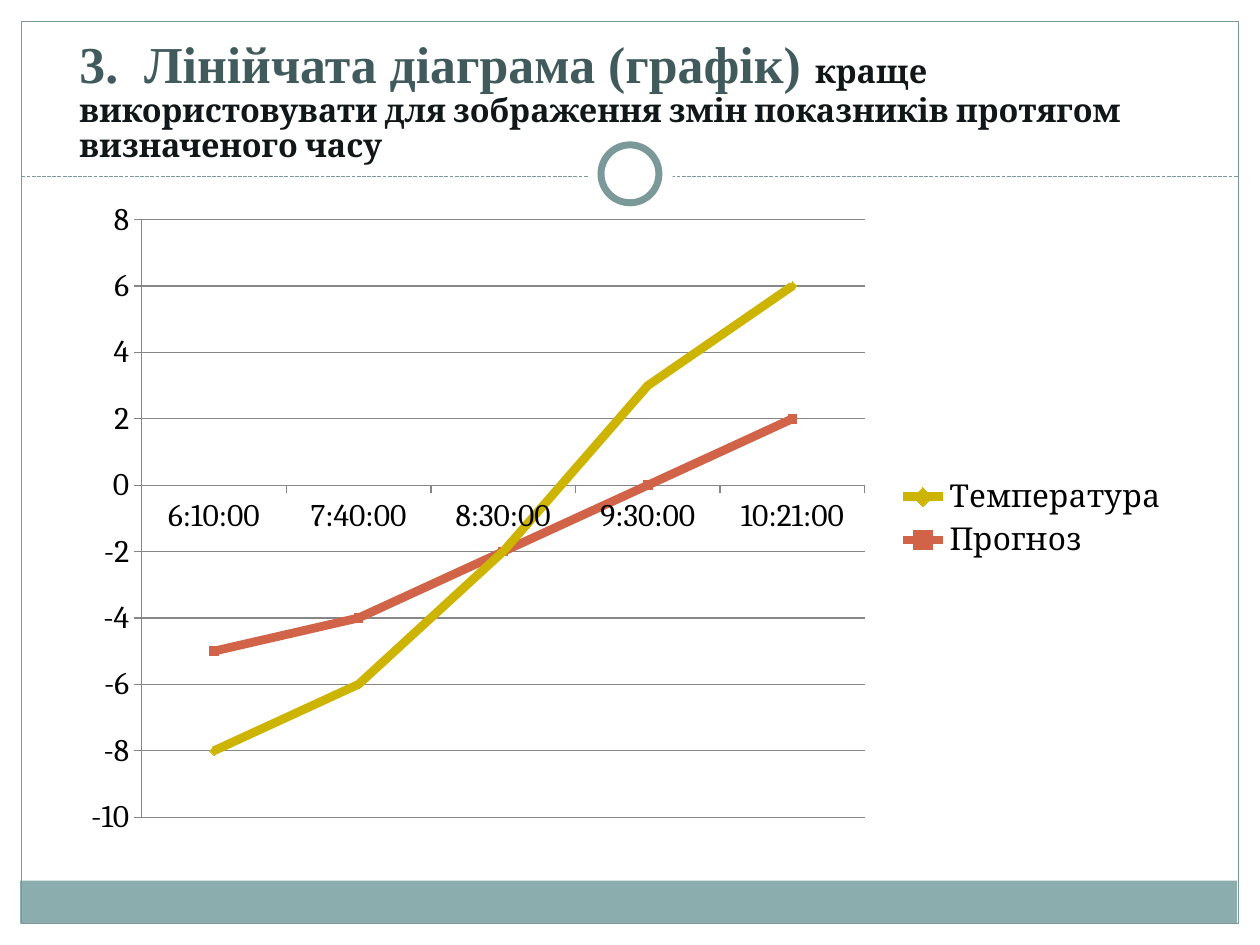
"""Build a slide showing when a line chart is the right choice."""
import pptx
import pptx.chart.data
import pptx.dml.color
import pptx.enum.chart
import pptx.enum.dml
import pptx.enum.shapes
import pptx.enum.text
import pptx.oxml
import pptx.oxml.ns
import pptx.util
from pptx.dml.color import RGBColor
from pptx.util import Inches, Pt

WHITE = RGBColor(0xFF, 0xFF, 0xFF)
BLACK = RGBColor(0, 0, 0)
TEAL = RGBColor(0x7C, 0x99, 0x9A)
BAND = RGBColor(0x8C, 0xAD, 0xAE)
HEADING = RGBColor(0x41, 0x5B, 0x5C)
INK = RGBColor(0x11, 0x16, 0x18)
GRID = RGBColor(0x86, 0x86, 0x86)
RED = RGBColor(0xD1, 0x63, 0x49)
GOLD = RGBColor(0xCC, 0xB4, 0x00)

MARKER = pptx.enum.chart.XL_MARKER_STYLE
SHAPE = pptx.enum.shapes.MSO_SHAPE

TITLE_RUNS = [
    ("3.  Лінійчата діаграма (графік) ", "Times New Roman", 29.6, HEADING),
    ("краще використовувати для зображення змін показників протягом визначеного часу",
     "Cambria", 18.5, INK),
]
TIMES = ["6:10:00", "7:40:00", "8:30:00", "9:30:00", "10:21:00"]
SERIES = [
    ("Прогноз", [-5, -4, -2, 0, 2], RED, MARKER.SQUARE),
    ("Температура", [-3, -2, 0, 3, 4], GOLD, MARKER.DIAMOND),
]
PLOT_AREA = {"x": 0.065, "y": 0.05, "w": 0.65, "h": 0.9}

FRAME_SHAPES = [
    (SHAPE.RECTANGLE, (0, 0, 10, 1.52), WHITE, None),
    (SHAPE.RECTANGLE, (0, 0, 0.17, 7.5), WHITE, None),
    (SHAPE.RECTANGLE, (9.83, 0, 0.17, 7.5), WHITE, None),
    (SHAPE.RECTANGLE, (0.16, 6.99, 9.66, 0.34), BAND, None),
    (SHAPE.RECTANGLE, (0.17, 0.17, 9.66, 7.16), None, 0.75),
]
RING_SHAPES = [
    (SHAPE.OVAL, (4.67, 1.05, 0.67, 0.67), WHITE, None),
    (SHAPE.OVAL, (4.77, 1.15, 0.46, 0.46), WHITE, 4),
]


def add_shapes(slide, items):
    for kind, box, fill, line_width in items:
        shape = slide.shapes.add_shape(kind, *map(Inches, box))
        shape.shadow.inherit = False
        if fill is None:
            shape.fill.background()
        else:
            shape.fill.solid()
            shape.fill.fore_color.rgb = fill
        if line_width is None:
            shape.line.fill.background()
        else:
            shape.line.color.rgb = TEAL
            shape.line.width = Pt(line_width)


def add_divider(slide):
    divider = slide.shapes.add_connector(
        pptx.enum.shapes.MSO_CONNECTOR.STRAIGHT,
        Inches(0.17), Inches(1.4), Inches(9.83), Inches(1.4))
    divider.line.color.rgb = TEAL
    divider.line.width = Pt(0.75)
    divider.line.dash_style = pptx.enum.dml.MSO_LINE.SQUARE_DOT
    properties = divider._element.spPr
    properties.append(pptx.oxml.parse_xml(
        f"<a:effectLst {pptx.oxml.ns.nsdecls('a')}/>"))


def fill_title(slide):
    title = slide.shapes.title
    title.left, title.top, title.width, title.height = map(
        Inches, (0.23, 0.16, 9.45, 1.17))
    frame = title.text_frame
    frame.word_wrap = True
    frame.auto_size = pptx.enum.text.MSO_AUTO_SIZE.NONE
    frame.vertical_anchor = pptx.enum.text.MSO_ANCHOR.TOP
    frame.margin_left, frame.margin_top = Inches(0.4), Inches(0.15)
    frame.margin_right, frame.margin_bottom = Inches(0.1), 0
    paragraph = frame.paragraphs[0]
    paragraph.alignment = pptx.enum.text.PP_ALIGN.LEFT
    paragraph.line_spacing = 0.9
    for text, font_name, size, color in TITLE_RUNS:
        run = paragraph.add_run()
        run.text = text
        run.font.name = font_name
        run.font.size = Pt(size)
        run.font.bold = True
        run.font.color.rgb = color
    slide.shapes._spTree.append(title._element)


def add_line_chart(slide):
    data = pptx.chart.data.CategoryChartData()
    data.categories = TIMES
    for name, values, _, _ in SERIES:
        data.add_series(name, values)
    chart = slide.shapes.add_chart(
        pptx.enum.chart.XL_CHART_TYPE.LINE_MARKERS_STACKED,
        *map(Inches, (0.55, 1.48, 8.83, 5.27)), data).chart
    chart.has_title = False
    chart.font.name = "Cambria"
    chart.font.size = Pt(18)
    chart.font.color.rgb = BLACK
    chart.has_legend = True
    chart.legend.position = pptx.enum.chart.XL_LEGEND_POSITION.RIGHT
    chart.legend.include_in_layout = False

    value_axis = chart.value_axis
    value_axis.minimum_scale, value_axis.maximum_scale = -10, 8
    value_axis.major_unit = 2
    value_axis.has_major_gridlines = True
    for axis in (chart.category_axis, value_axis):
        axis.major_tick_mark = pptx.enum.chart.XL_TICK_MARK.OUTSIDE
    for line in (chart.category_axis.format.line, value_axis.format.line,
                 value_axis.major_gridlines.format.line):
        line.color.rgb = GRID
        line.width = Pt(0.75)

    plot = chart.plots[0]
    plot.vary_by_categories = False
    for series, (_, _, color, marker) in zip(plot.series, SERIES):
        series.smooth = False
        series.format.line.color.rgb = color
        series.format.line.width = Pt(5)
        series.marker.style = marker
        series.marker.size = 5
        series.marker.format.fill.solid()
        series.marker.format.fill.fore_color.rgb = color
        series.marker.format.line.color.rgb = color

    plot_area = chart._chartSpace.chart.plotArea
    for layout in plot_area.findall(pptx.oxml.ns.qn("c:layout")):
        plot_area.remove(layout)
    modes = '<c:xMode val="edge"/><c:yMode val="edge"/>'
    sizes = "".join(f'<c:{key} val="{value}"/>' for key, value in PLOT_AREA.items())
    plot_area.insert(0, pptx.oxml.parse_xml(
        f"<c:layout {pptx.oxml.ns.nsdecls('c')}><c:manualLayout>"
        f'<c:layoutTarget val="inner"/>{modes}{sizes}</c:manualLayout></c:layout>'))


def main():
    presentation = pptx.Presentation()
    presentation.slide_width = Inches(10)
    presentation.slide_height = Inches(7.5)
    slide = presentation.slides.add_slide(presentation.slide_layouts[5])
    add_shapes(slide, FRAME_SHAPES)
    add_divider(slide)
    add_shapes(slide, RING_SHAPES)
    fill_title(slide)
    add_line_chart(slide)
    presentation.save("out.pptx")


if __name__ == "__main__":
    main()
